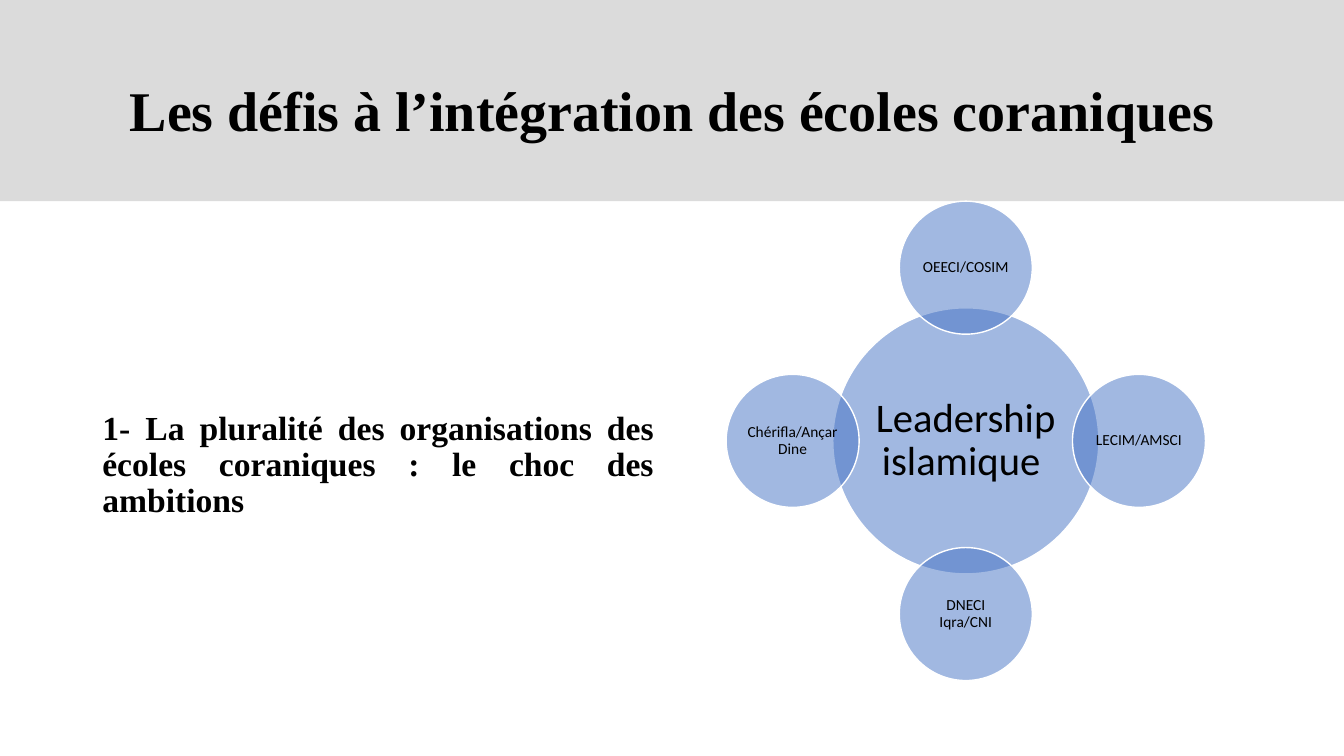
import math

import lxml.etree
import pptx
import pptx.dml.color
import pptx.enum.shapes
import pptx.enum.text
import pptx.oxml.ns
import pptx.util

Cm = pptx.util.Cm
Align = pptx.enum.text.PP_ALIGN
Anchor = pptx.enum.text.MSO_ANCHOR
Shape = pptx.enum.shapes.MSO_SHAPE

GREY = pptx.dml.color.RGBColor(0xDB, 0xDB, 0xDB)
BLUE = pptx.dml.color.RGBColor(0x44, 0x72, 0xC4)
WHITE = pptx.dml.color.RGBColor(0xFF, 0xFF, 0xFF)
BLACK = pptx.dml.color.RGBColor(0, 0, 0)

TITLE = "Les défis à l’intégration des écoles coraniques"
CHALLENGE = "1- La pluralité des organisations des écoles coraniques : le choc des ambitions"
LEADERSHIP = "Leadership islamique "
ORGANISATIONS = ["OEECI/COSIM", "LECIM/AMSCI", "DNECI Iqra/CNI", "Chérifla/Ançar Dine"]

HEADING_FONT = {"name": "Times New Roman", "bold": True}
DIAGRAM_FONT = {"name": "Calibri", "bold": False}


def apply_format(target, values):
    """Set each named attribute of the target."""
    for name, value in values.items():
        setattr(target, name, value)


def write_text(shape, text, size, font, alignment, anchor, inset=None):
    """Write one formatted paragraph into a shape."""
    frame = shape.text_frame
    apply_format(frame, {"word_wrap": True, "vertical_anchor": anchor})
    if inset is not None:
        sides = ("margin_left", "margin_top", "margin_right", "margin_bottom")
        apply_format(frame, dict.fromkeys(sides, inset))
    para = frame.paragraphs[0]
    apply_format(para, {"alignment": alignment, "line_spacing": 0.9})
    span = para.add_run()
    span.text = text
    apply_format(span.font, {"size": pptx.util.Pt(size), **font})
    span.font.color.rgb = BLACK


def add_filled(page, kind, box, colour):
    """Add a flat shape with a solid fill."""
    shape = page.shapes.add_shape(kind, *box)
    shape.shadow.inherit = False
    shape.fill.solid()
    shape.fill.fore_color.rgb = colour
    return shape


def add_circle(page, centre_x, centre_y, diameter, text, size, inset):
    """Add a half-transparent labelled circle around a centre."""
    box = (centre_x - diameter // 2, centre_y - diameter // 2, diameter, diameter)
    circle = add_filled(page, Shape.OVAL, box, BLUE)
    colour = circle.fill._xPr.find(".//" + pptx.oxml.ns.qn("a:srgbClr"))
    lxml.etree.SubElement(colour, pptx.oxml.ns.qn("a:alpha"), val="50000")
    circle.line.color.rgb = WHITE
    circle.line.width = pptx.util.Pt(1)
    write_text(circle, text, size, DIAGRAM_FONT, Align.CENTER, Anchor.MIDDLE, inset)


def add_header(page, left, top, width, height):
    """Add the grey band and the centred title."""
    band = add_filled(page, Shape.RECTANGLE, (left, top, width, height), GREY)
    band.line.fill.background()
    margin = Cm(2.33)
    title = page.shapes.add_textbox(left + margin, top + Cm(1.01), width - 2 * margin, Cm(3.68))
    write_text(title, TITLE, 40, HEADING_FONT, Align.CENTER, Anchor.MIDDLE)


def add_challenge(page, left, top, width, height):
    """Add the justified statement of the challenge."""
    box = page.shapes.add_textbox(left, top, width, height)
    write_text(box, CHALLENGE, 24, HEADING_FONT, Align.JUSTIFY, Anchor.TOP)


def add_radial_diagram(page, left, top, side):
    """Add the hub with its organisations spaced evenly clockwise from the top."""
    hub = int(side * 0.555)
    satellite = hub // 2
    orbit = (side - satellite) // 2
    centre_x, centre_y = left + side // 2, top + side // 2
    add_circle(page, centre_x, centre_y, hub, LEADERSHIP, 29, Cm(0.1))
    for index, name in enumerate(ORGANISATIONS):
        angle = math.tau * index / len(ORGANISATIONS)
        x = centre_x + round(orbit * math.sin(angle))
        y = centre_y - round(orbit * math.cos(angle))
        add_circle(page, x, y, satellite, name, 11, Cm(0.04))


def main():
    """Build the slide and save the deck."""
    deck = pptx.Presentation()
    deck.slide_width, deck.slide_height = Cm(33.87), Cm(19.05)
    page = deck.slides.add_slide(deck.slide_layouts[6])
    add_header(page, 0, 0, deck.slide_width, Cm(5.07))
    add_challenge(page, Cm(2.33), Cm(10.24), Cm(14.4), Cm(6.93))
    add_radial_diagram(page, Cm(18.3), Cm(5.07), Cm(12.08))
    deck.save("out.pptx")


if __name__ == "__main__":
    main()
